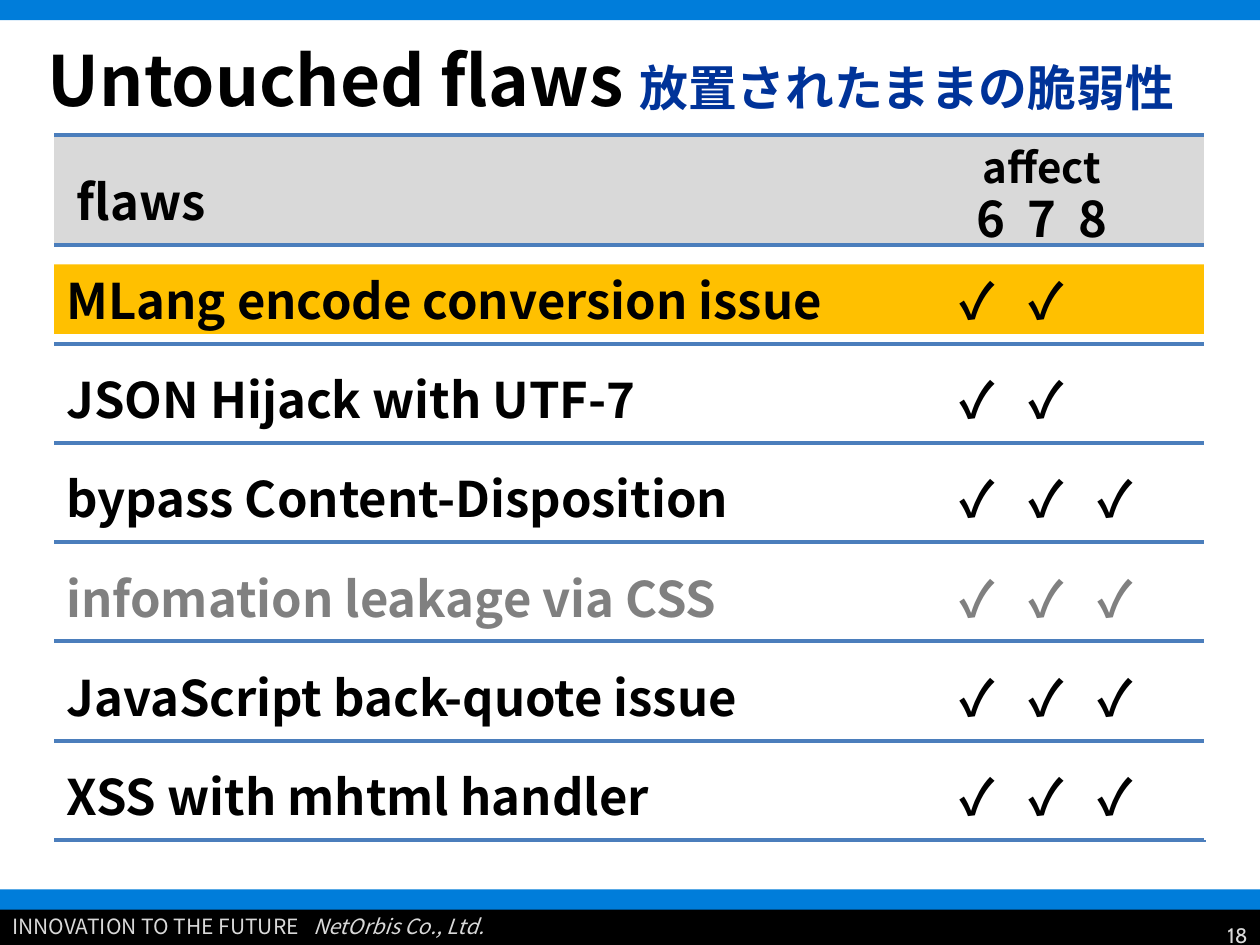
from lxml.etree import SubElement
from pptx import Presentation
from pptx.dml.color import RGBColor
from pptx.enum.shapes import MSO_CONNECTOR, MSO_SHAPE
from pptx.enum.text import MSO_ANCHOR, MSO_AUTO_SIZE, PP_ALIGN
from pptx.oxml.ns import qn
from pptx.util import Cm, Pt

COLORS = {
    "black": "000000", "white": "FFFFFF", "blue": "007DDA", "navy": "003399",
    "amber": "FFC000", "light": "D9D9D9", "gray": "808080", "rule": "4B7EBC",
}
SANS = "Noto Sans CJK JP"
LEFT, RIGHT = 1.09, 24.31
TABLE_TOP, HEADER_BOTTOM, ROW_HEIGHT = 2.72, 4.93, 2
TEXT_HEIGHT = 1.45
VERSION_LEFT, VERSION_STEP = 18.69, 1.4
FLAWS = [
    ("MLang encode conversion issue", 2, "black"),
    ("JSON Hijack with UTF-7", 2, "black"),
    ("bypass Content-Disposition", 3, "black"),
    ("infomation leakage via CSS", 3, "gray"),
    ("JavaScript back-quote issue", 3, "black"),
    ("XSS with mhtml handler", 3, "black"),
]


class SlideBuilder:
    """Draws styled elements, measured in centimetres, on one slide."""

    def __init__(self, slide):
        self.slide = slide

    def color(self, name):
        return RGBColor.from_string(COLORS[name])

    def run(self, paragraph, text, size, color="black", bold=True, italic=False, font=SANS):
        run = paragraph.add_run()
        run.text = text
        run.font.size = Pt(size)
        run.font.bold = bold
        run.font.italic = italic
        run.font.color.rgb = self.color(color)
        run.font.name = font
        SubElement(run.font._element, qn("a:ea")).set("typeface", font)

    def title(self, left, top, width, height):
        title = self.slide.shapes.title
        title.left, title.top, title.width, title.height = map(Cm, (left, top, width, height))
        title.text_frame.auto_size = MSO_AUTO_SIZE.NONE
        title.text_frame.vertical_anchor = MSO_ANCHOR.MIDDLE
        paragraph = title.text_frame.paragraphs[0]
        paragraph.alignment = PP_ALIGN.LEFT
        return paragraph

    def bar(self, left, top, width, height, color):
        shape = self.slide.shapes.add_shape(
            MSO_SHAPE.RECTANGLE, Cm(left), Cm(top), Cm(width), Cm(height))
        shape.shadow.inherit = False
        shape.fill.solid()
        shape.fill.fore_color.rgb = self.color(color)
        shape.line.fill.background()

    def text_box(self, left, top, width, height, align=PP_ALIGN.LEFT, anchor=MSO_ANCHOR.TOP):
        box = self.slide.shapes.add_textbox(Cm(left), Cm(top), Cm(width), Cm(height))
        box.text_frame.word_wrap = True
        box.text_frame.vertical_anchor = anchor
        paragraph = box.text_frame.paragraphs[0]
        paragraph.alignment = align
        return paragraph

    def line(self, start_x, start_y, end_x, end_y, color="rule"):
        connector = self.slide.shapes.add_connector(
            MSO_CONNECTOR.STRAIGHT, Cm(start_x), Cm(start_y), Cm(end_x), Cm(end_y))
        connector.line.color.rgb = self.color(color)
        connector.line.width = Pt(2.25)
        SubElement(connector._element.spPr, qn("a:effectLst"))


def add_frame(builder):
    builder.bar(0, 0, 25.4, 0.41, "blue")
    builder.bar(0, 18.14, 25.4, 0.91, "black")
    footer = builder.text_box(0, 18.29, 18.6, 0.77)
    builder.run(footer, "INNOVATION TO THE FUTURE   ", 12, "light", bold=False)
    builder.run(footer, "NetOrbis Co., Ltd.", 12, "light", bold=False, italic=True)
    builder.bar(0, 17.93, 25.4, 0.41, "blue")
    number = builder.text_box(19.48, 18.39, 5.92, 0.91, PP_ALIGN.RIGHT, MSO_ANCHOR.MIDDLE)
    builder.run(number, "18", 12, "light", bold=False, font="Cabin")


def add_header(builder):
    title = builder.title(0.71, 0, 24.69, 3.18)
    builder.run(title, "Untouched flaws ", 39.6)
    builder.run(title, "放置されたままの脆弱性", 27.9, "navy")
    builder.bar(LEFT, TABLE_TOP, RIGHT - LEFT, HEADER_BOTTOM - TABLE_TOP, "light")
    builder.run(builder.text_box(1.3, 3.33, 8, TEXT_HEIGHT), "flaws", 28)
    builder.run(builder.text_box(17.9, 2.72, 6.2, 1.27, PP_ALIGN.CENTER), "affect", 24)
    builder.run(builder.text_box(17.9, 3.68, 6.2, TEXT_HEIGHT, PP_ALIGN.CENTER), "6  7  8", 28)
    builder.line(LEFT, TABLE_TOP, RIGHT, TABLE_TOP)
    builder.line(LEFT, HEADER_BOTTOM, RIGHT, HEADER_BOTTOM)


def add_rows(builder):
    builder.bar(LEFT, 5.33, RIGHT - LEFT, 1.4, "amber")
    for row, (flaw, affected, color) in enumerate(FLAWS):
        bottom = HEADER_BOTTOM + ROW_HEIGHT * (row + 1)
        top = bottom - 1.6
        builder.run(builder.text_box(LEFT, top, 17.5, TEXT_HEIGHT), flaw, 28, color)
        for version in range(affected):
            left = VERSION_LEFT + VERSION_STEP * version
            mark = builder.text_box(left, top, 2, TEXT_HEIGHT, PP_ALIGN.CENTER)
            builder.run(mark, "✓", 28, color)
        builder.line(LEFT, bottom, RIGHT, bottom)
    builder.line(RIGHT, 2.34, RIGHT, bottom, "white")


def main():
    presentation = Presentation()
    presentation.slide_width, presentation.slide_height = Cm(25.4), Cm(19.05)
    builder = SlideBuilder(presentation.slides.add_slide(presentation.slide_layouts[5]))
    add_frame(builder)
    add_header(builder)
    add_rows(builder)
    presentation.save("out.pptx")


if __name__ == "__main__":
    main()
